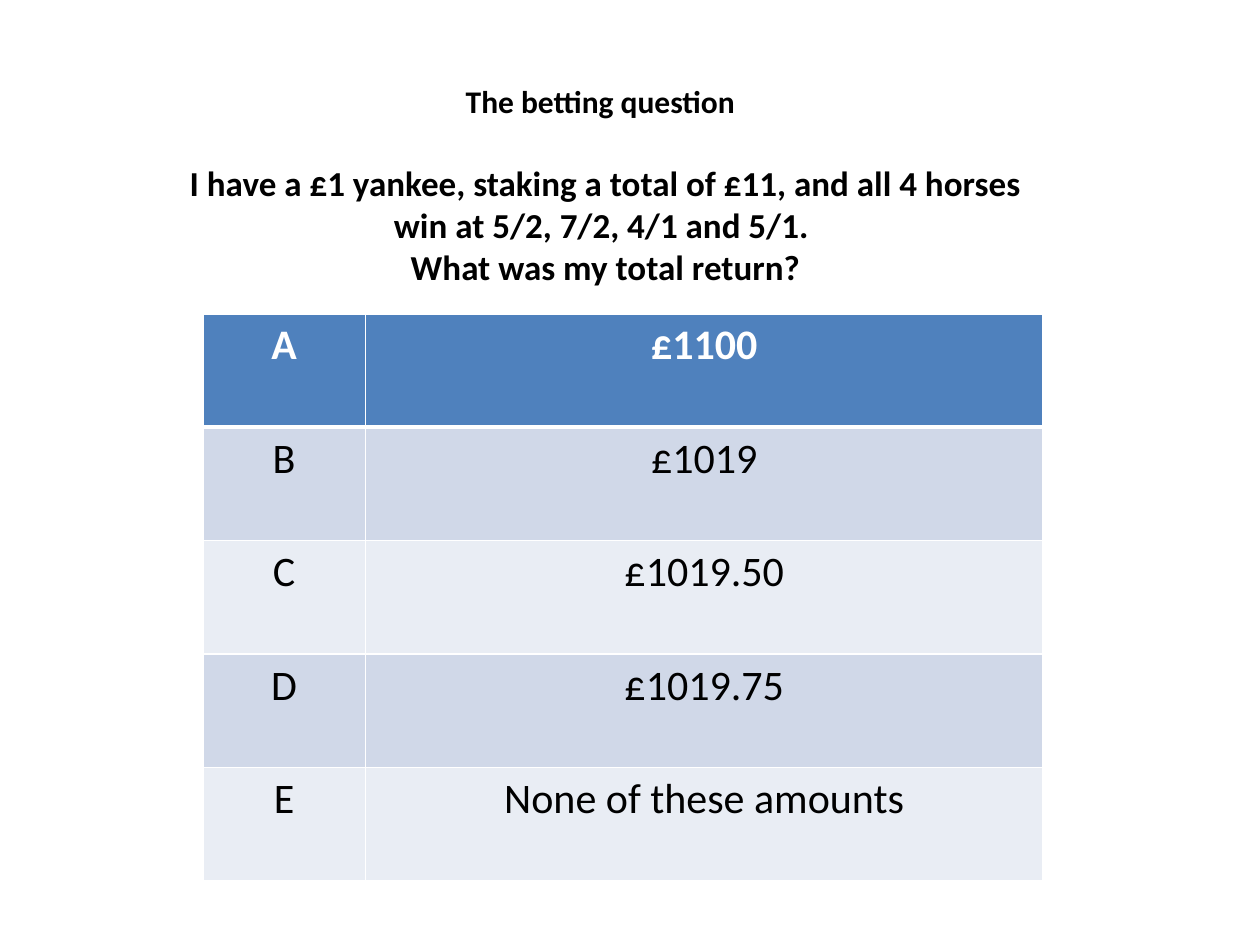
from dataclasses import dataclass

from lxml.etree import SubElement
from pptx import Presentation
from pptx.dml.color import RGBColor as RGB
from pptx.enum.text import MSO_AUTO_SIZE as AutoSize, PP_ALIGN as Align
from pptx.oxml.ns import qn
from pptx.util import Inches, Pt


@dataclass(frozen=True)
class Theme:
    font: str = "Calibri"
    ink: str = "000000"
    paper: str = "FFFFFF"
    header: str = "4F81BD"
    bands: tuple = ("D0D8E8", "E9EDF4")
    heading_size: int = 18
    question_size: int = 20
    answer_size: int = 24
    rule: int = 1
    header_rule: int = 3


THEME = Theme()
WIDTH, HEIGHT = Inches(10), Inches(7.5)

# Boxes as shares of the slide: left, top, width, height
HEADING_BOX = (0.248, 0.08, 0.457, 0.053)
QUESTION_BOX = (0.138, 0.164, 0.685, 0.148)
ANSWERS_BOX = (0.161, 0.332, 0.667, 0.6)
LETTER_SHARE = 1.29 / 6.67

HEADING = ["The betting question"]
QUESTION = [
    "I have a £1 yankee, staking a total of £11, and all 4 horses win at 5/2, 7/2, 4/1 and 5/1. ",
    "What was my total return?",
]
ANSWERS = ["£1100", "£1019", "£1019.50", "£1019.75", "None of these amounts"]


def place(box):
    left, top, width, height = box
    return (int(left * WIDTH), int(top * HEIGHT),
            int(width * WIDTH), int(height * HEIGHT))


def write(paragraph, words, size, color, bold):
    paragraph.alignment = Align.CENTER
    run = paragraph.add_run()
    run.text = words
    run.font.name = THEME.font
    run.font.size = Pt(size)
    run.font.bold = bold
    run.font.color.rgb = RGB.from_string(color)


def add_text(slide, box, lines, size):
    frame = slide.shapes.add_textbox(*place(box)).text_frame
    frame.word_wrap = True
    frame.auto_size = AutoSize.SHAPE_TO_FIT_TEXT
    for index, line in enumerate(lines):
        paragraph = frame.add_paragraph() if index else frame.paragraphs[0]
        write(paragraph, line, size, THEME.ink, True)


def add_borders(cell, widths):
    properties = cell._tc.get_or_add_tcPr()
    for side, width in widths.items():
        border = SubElement(properties, qn(f"a:ln{side}"), w=str(Pt(width)))
        fill = SubElement(border, qn("a:solidFill"))
        SubElement(fill, qn("a:srgbClr"), val=THEME.paper)


def add_answers(slide, box, answers):
    left, top, width, height = place(box)
    table = slide.shapes.add_table(len(answers), 2, left, top, width, height).table
    letter_width = int(width * LETTER_SHARE)
    table.columns[0].width = letter_width
    table.columns[1].width = width - letter_width

    for row, answer in enumerate(answers):
        is_header = row == 0
        band = THEME.header if is_header else THEME.bands[(row - 1) % 2]
        color = THEME.paper if is_header else THEME.ink
        # The heavy rule is shared by the first row and the one below it
        widths = {
            "L": THEME.rule,
            "R": THEME.rule,
            "T": THEME.header_rule if row == 1 else THEME.rule,
            "B": THEME.header_rule if is_header else THEME.rule,
        }
        for column, words in enumerate(("ABCDE"[row], answer)):
            cell = table.cell(row, column)
            add_borders(cell, widths)
            cell.fill.solid()
            cell.fill.fore_color.rgb = RGB.from_string(band)
            write(cell.text_frame.paragraphs[0], words,
                  THEME.answer_size, color, is_header)


def main():
    deck = Presentation()
    deck.slide_width, deck.slide_height = WIDTH, HEIGHT
    slide = deck.slides.add_slide(deck.slide_layouts[6])

    # Answer grid
    add_answers(slide, ANSWERS_BOX, ANSWERS)
    # Question and heading
    add_text(slide, QUESTION_BOX, QUESTION, THEME.question_size)
    add_text(slide, HEADING_BOX, HEADING, THEME.heading_size)

    deck.save("out.pptx")


if __name__ == "__main__":
    main()
